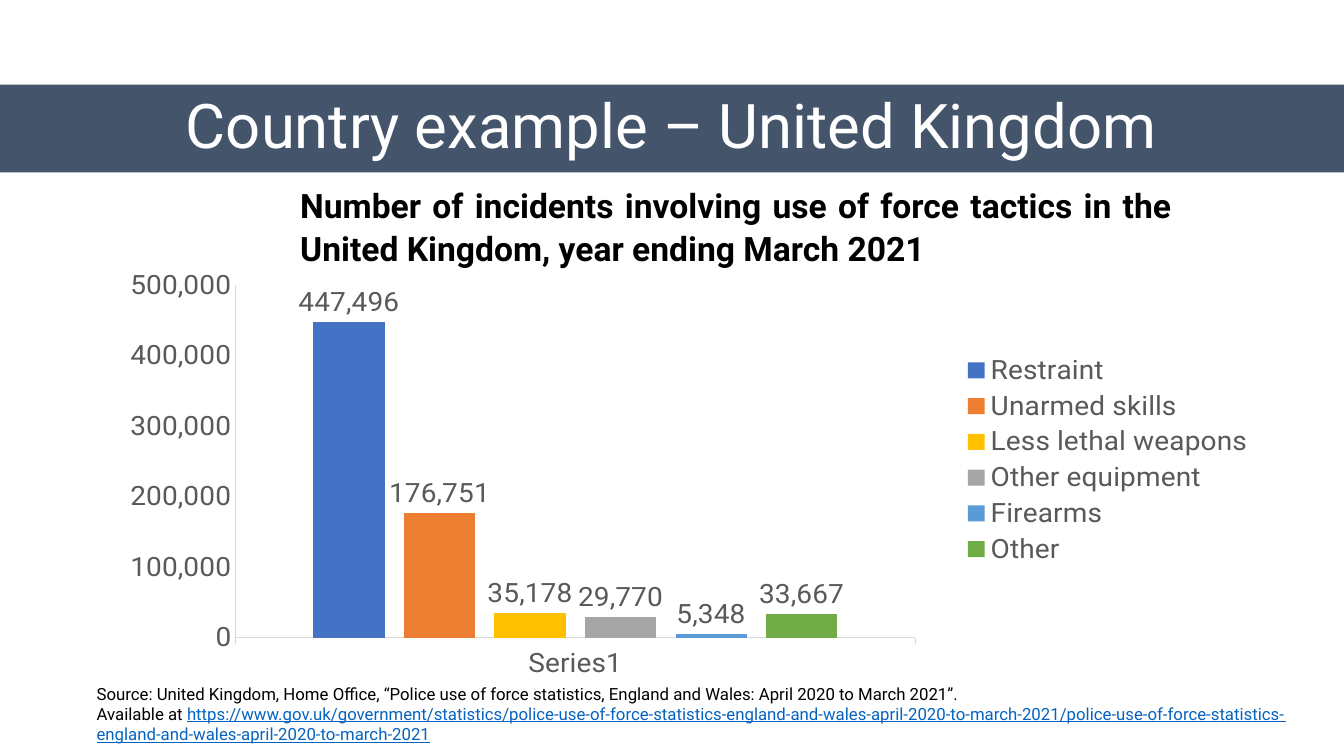
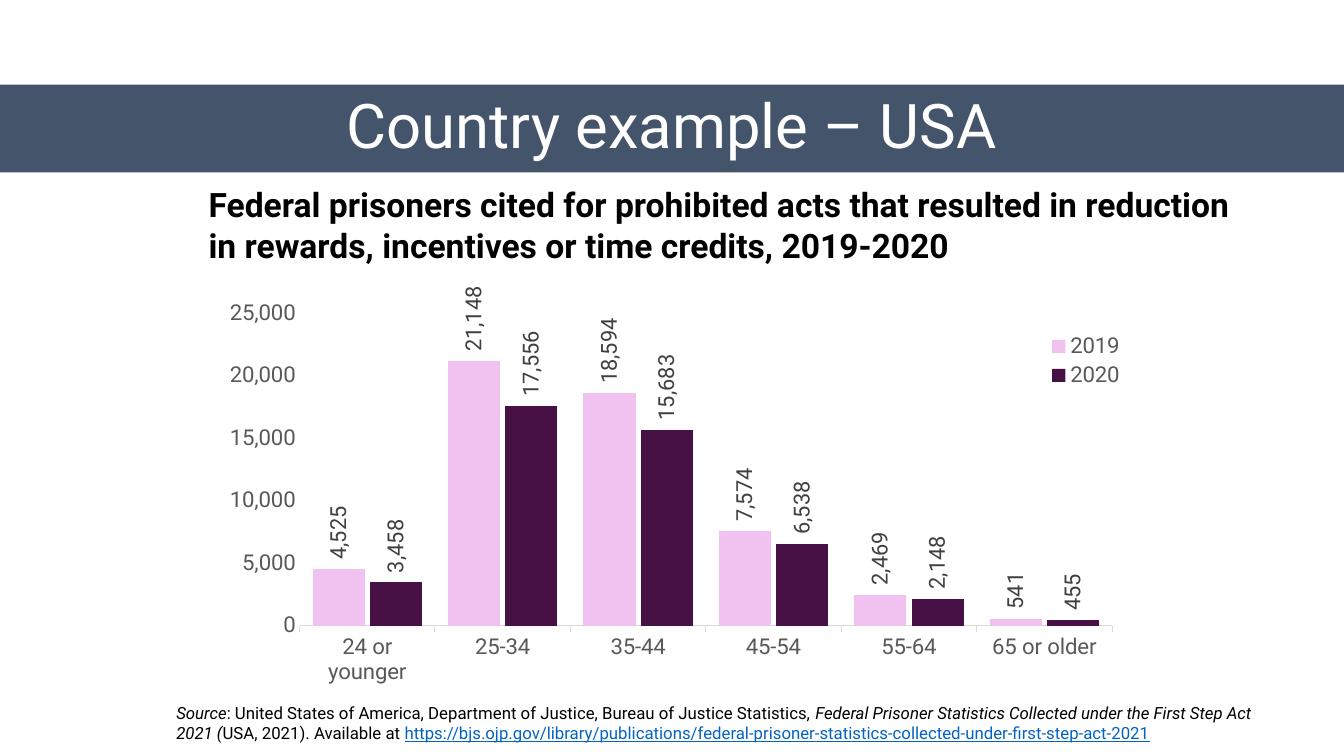
from lxml.etree import SubElement
from pptx import Presentation
from pptx.chart.data import CategoryChartData
from pptx.dml.color import RGBColor
from pptx.enum.chart import XL_CHART_TYPE, XL_LABEL_POSITION, XL_LEGEND_POSITION, XL_TICK_MARK
from pptx.enum.shapes import MSO_SHAPE
from pptx.enum.text import MSO_ANCHOR, MSO_AUTO_SIZE, PP_ALIGN
from pptx.oxml.ns import qn
from pptx.util import Inches, Pt

WIDTH, HEIGHT = Inches(13.33), Inches(7.5)
FONT = "Roboto"
SLATE, BLACK, WHITE = "44546A", "000000", "FFFFFF"
GREY, DARK_GREY, LIGHT_GREY, LINK = "595959", "404040", "D9D9D9", "0563C1"


def rgb(value):
    return RGBColor.from_string(value)


def place(x, y, w, h):
    """Turn percentages of the slide's size into lengths."""
    return [int(share * size / 100)
            for share, size in zip((x, y, w, h), (WIDTH, HEIGHT, WIDTH, HEIGHT))]


def style(font, size, color):
    font.name = FONT
    font.size = Pt(size)
    font.color.rgb = rgb(color)


def add_band(s, title):
    sp = s.shapes.add_shape(MSO_SHAPE.RECTANGLE, *place(0, 11.2, 100, 11.6))
    sp.shadow.inherit = False
    sp.fill.solid()
    sp.fill.fore_color.rgb = rgb(SLATE)
    sp.line.fill.background()
    tf = sp.text_frame
    tf.text = title
    tf.vertical_anchor = MSO_ANCHOR.MIDDLE
    p = tf.paragraphs[0]
    p.alignment = PP_ALIGN.CENTER
    p.line_spacing = 0.9
    style(p.runs[0].font, 44, WHITE)


def add_paragraph_box(s, box):
    """Add a wrapping text box and return its only paragraph."""
    tf = s.shapes.add_textbox(*place(*box)).text_frame
    tf.word_wrap = True
    tf.auto_size = MSO_AUTO_SIZE.SHAPE_TO_FIT_TEXT
    return tf.paragraphs[0]


def add_heading(s, box, text, align=PP_ALIGN.LEFT, spacing=1.0):
    p = add_paragraph_box(s, box)
    p.text = text
    p.alignment = align
    p.line_spacing = spacing
    style(p.runs[0].font, 24, BLACK)
    p.runs[0].font.bold = True


def add_source(s, box, parts):
    """Add a source note from (kind, text) parts; kind is plain, italic, link or break."""
    p = add_paragraph_box(s, box)
    for kind, text in parts:
        if kind == "break":
            p.add_line_break()
            continue
        r = p.add_run()
        r.text = text
        style(r.font, 12, LINK if kind == "link" else BLACK)
        r.font.italic = kind == "italic"
        r.font.underline = kind == "link"


def set_layout(parent, index, box, inner=False):
    """Fix a chart part at percentages of the chart's size."""
    for old in parent.findall(qn("c:layout")):
        parent.remove(old)
    layout = parent.makeelement(qn("c:layout"))
    parent.insert(index, layout)
    manual = SubElement(layout, qn("c:manualLayout"))
    values = [("layoutTarget", "inner")] if inner else []
    values += [("xMode", "edge"), ("yMode", "edge")]
    values += [(key, f"{share / 100:.3f}") for key, share in zip("xywh", box)]
    for tag, value in values:
        SubElement(manual, qn(f"c:{tag}")).set("val", value)


def style_axes(chart, maximum, step, line_color):
    cat, val = chart.category_axis, chart.value_axis
    for axis in (cat, val):
        style(axis.tick_labels.font, chart.font.size.pt, GREY)
        axis.has_major_gridlines = False
        axis.minor_tick_mark = XL_TICK_MARK.NONE
    cat.major_tick_mark = XL_TICK_MARK.OUTSIDE
    val.major_tick_mark = XL_TICK_MARK.NONE
    val.minimum_scale, val.maximum_scale, val.major_unit = 0, maximum, step
    val.tick_labels.number_format = "#,##0"
    val.tick_labels.number_format_is_linked = False
    for axis, color in ((cat, LIGHT_GREY), (val, line_color)):
        if color:
            axis.format.line.color.rgb = rgb(color)
            axis.format.line.width = Pt(0.75)
        else:
            axis.format.line.fill.background()


def style_labels(labels, size, color, number_format, upright):
    labels.show_value = True
    labels.position = XL_LABEL_POSITION.OUTSIDE_END
    labels.number_format = number_format
    labels.number_format_is_linked = False
    style(labels.font, size, color)
    if upright:
        body = labels._element.find(f"{qn('c:txPr')}/{qn('a:bodyPr')}")
        body.set("rot", "-5400000")
        body.set("vert", "horz")


def add_columns(s, box, categories, series, *, size, scale, gap, overlap, plot_box,
                legend_box, axis_line=None, label_color=GREY,
                label_format="#,##0", upright=False):
    """Add a column chart; series holds (name, colour, values)."""
    data = CategoryChartData(number_format="#,##0")
    data.categories = categories
    for name, _, values in series:
        data.add_series(name, values)
    chart = s.shapes.add_chart(XL_CHART_TYPE.COLUMN_CLUSTERED, *place(*box), data).chart
    chart.has_title = False
    style(chart.font, size, GREY)
    style_axes(chart, *scale, axis_line)

    plot = chart.plots[0]
    plot.vary_by_categories = False
    plot.gap_width, plot.overlap = gap, overlap
    for ser, (_, color, _) in zip(plot.series, series):
        ser.format.fill.solid()
        ser.format.fill.fore_color.rgb = rgb(color)
        style_labels(ser.data_labels, size, label_color, label_format, upright)

    chart.has_legend = True
    legend = chart.legend
    legend.position = XL_LEGEND_POSITION.RIGHT
    legend.include_in_layout = False
    style(legend.font, size, GREY)
    chart_xml = chart.element.find(qn("c:chart"))
    set_layout(chart_xml.find(qn("c:plotArea")), 0, plot_box, inner=True)
    set_layout(chart_xml.find(qn("c:legend")), 1, legend_box)


def add_slide(prs, title):
    s = prs.slides.add_slide(prs.slide_layouts[6])
    add_band(s, title)
    return s


def build_uk(prs):
    s = add_slide(prs, "Country example – United Kingdom")
    add_heading(s, (21.6, 23.47, 66.3, 12.5),
                "Number of incidents involving use of force tactics in the "
                "United Kingdom, year ending March 2021",
                PP_ALIGN.JUSTIFY, 1.07)
    tactics = [
        ("Restraint", "4472C4", [447496]),
        ("Unarmed skills", "ED7D31", [176751]),
        ("Less lethal weapons", "FFC000", [35178]),
        ("Other equipment", "A5A5A5", [29770]),
        ("Firearms", "5B9BD5", [5348]),
        ("Other", "70AD47", [33667]),
    ]
    add_columns(s, (6.45, 35.6, 87.83, 54.27), ["Series1"], tactics,
                size=20, scale=(500000, 100000), gap=219, overlap=-27,
                plot_box=(12.6, 3.2, 57.6, 90.5), legend_box=(74, 20, 25, 56),
                axis_line=LIGHT_GREY)
    add_source(s, (6.45, 89.73, 90.53, 9.47), [
        ("plain", "Source: United Kingdom, Home Office, “Police use of force statistics, "
                  "England and Wales: April 2020 to March 2021”."),
        ("break", ""),
        ("plain", "Available at "),
        ("link", "https://www.gov.uk/government/statistics/"
                 "police-use-of-force-statistics-england-and-wales-april-2020-to-march-2021/"
                 "police-use-of-force-statistics-england-and-wales-april-2020-to-march-2021"),
    ])


def build_usa(prs):
    s = add_slide(prs, "Country example – USA")
    ages = ["24 or younger", "25-34", "35-44", "45-54", "55-64", "65 or older"]
    years = [
        ("2019", "F1C1F0", [4525, 21148, 18594, 7574, 2469, 541]),
        ("2020", "471146", [3458, 17556, 15683, 6538, 2148, 455]),
    ]
    add_columns(s, (17.1, 37.33, 67.73, 60.13), ages, years,
                size=16, scale=(25000, 5000), gap=50, overlap=-10,
                plot_box=(6.9, 4.2, 90, 70.7), legend_box=(88.5, 8, 11, 14),
                label_color=DARK_GREY, upright=True,
                label_format='_-* #,##0_-;\\-* #,##0_-;_-* "-"??_-;_-@_')
    add_heading(s, (14.78, 23.73, 78.98, 12.13),
                "Federal prisoners cited for prohibited acts that resulted in reduction "
                "in rewards, incentives or time credits, 2019-2020")
    add_source(s, (12.38, 92.27, 82.13, 6.67), [
        ("italic", "Source"),
        ("plain", ": United States of America, Department of Justice, "
                  "Bureau of Justice Statistics, "),
        ("italic", "Federal Prisoner Statistics Collected under the First Step Act 2021 ("),
        ("plain", "USA, 2021). Available at "),
        ("link", "https://bjs.ojp.gov/library/publications/"
                 "federal-prisoner-statistics-collected-under-first-step-act-2021"),
    ])


def main():
    prs = Presentation()
    prs.slide_width, prs.slide_height = WIDTH, HEIGHT
    build_uk(prs)
    build_usa(prs)
    prs.save("out.pptx")


if __name__ == "__main__":
    main()
